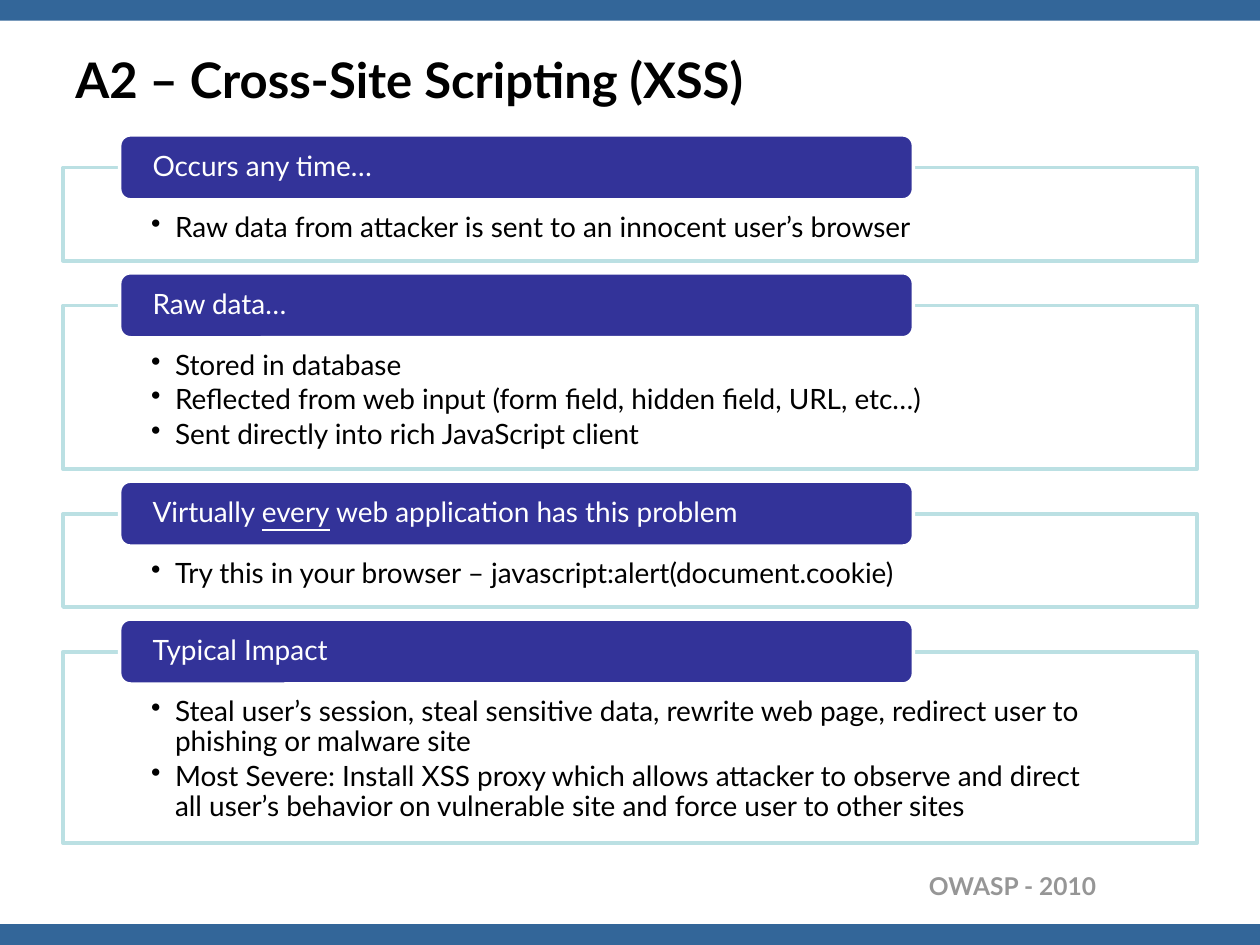
from dataclasses import dataclass

from lxml.etree import SubElement
from pptx import Presentation
from pptx.dml.color import RGBColor
from pptx.enum.shapes import MSO_SHAPE as Preset
from pptx.enum.text import MSO_ANCHOR as Anchor, MSO_AUTO_SIZE as AutoSize, PP_ALIGN as Align
from pptx.oxml.ns import qn
from pptx.util import Cm, Pt


@dataclass(frozen=True)
class Theme:
    font: str = "Lato"
    title_size: int = 28
    footer_size: int = 14
    text_size: int = 16
    band: str = "336699"
    tab: str = "333399"
    outline: str = "BBE0E3"
    light: str = "FFFFFF"
    dark: str = "000000"
    muted: str = "969696"
    line_width: int = 2


THEME = Theme()
SLIDE_W, SLIDE_H = 25.4, 19.05
BAND_H = 0.42
TAB_H, TAB_RISE, SECTION_GAP = 1.31, 0.66, 0.24

# Each section: heading runs as (text, underlined), points, body height in cm
SECTIONS = [
    ([("Occurs any time…", False)],
     ["Raw data from attacker is sent to an innocent user’s browser"], 1.88),
    ([("Raw data…", False)],
     ["Stored in database",
      "Reflected from web input (form field, hidden field, URL, etc…)",
      "Sent directly into rich JavaScript client"], 3.3),
    ([("Virtually ", False), ("every", True), (" web application has this problem", False)],
     ["Try this in your browser – javascript:alert(document.cookie)"], 1.88),
    ([("Typical Impact", False)],
     ["Steal user’s session, steal sensitive data, rewrite web page, "
      "redirect user to phishing or malware site",
      "Most Severe: Install XSS proxy which allows attacker to observe and direct "
      "all user’s behavior on vulnerable site and force user to other sites"], 3.86),
]


def set_all(target, values):
    for name, value in values.items():
        setattr(target, name, value)


def style_font(font, size, color, bold=False):
    set_all(font, {"name": THEME.font, "size": Pt(size), "bold": bold})
    font.color.rgb = RGBColor.from_string(color)


def add_panel(slide, preset, box, fill, outline=None):
    panel = slide.shapes.add_shape(preset, *map(Cm, box))
    panel.shadow.inherit = False
    panel.fill.solid()
    panel.fill.fore_color.rgb = RGBColor.from_string(fill)
    if outline:
        panel.line.color.rgb = RGBColor.from_string(outline)
        panel.line.width = Pt(THEME.line_width)
    else:
        panel.line.fill.background()
    return panel


def set_frame(frame, margins, anchor):
    left, top, right, bottom = map(Cm, margins)
    set_all(frame, {"margin_left": left, "margin_top": top, "margin_right": right,
                    "margin_bottom": bottom, "vertical_anchor": anchor, "word_wrap": True})


def add_bullet(paragraph):
    properties = paragraph._p.get_or_add_pPr()
    properties.set("marL", str(Cm(0.48)))
    properties.set("indent", str(Cm(-0.48)))
    SubElement(properties, qn("a:buChar")).set("char", "•")


def add_label(slide, box, text, size, color, align, auto_size):
    label = slide.shapes.add_textbox(*map(Cm, box))
    set_all(label.text_frame, {"word_wrap": True, "vertical_anchor": Anchor.MIDDLE,
                               "auto_size": auto_size})
    paragraph = label.text_frame.paragraphs[0]
    set_all(paragraph, {"text": text, "alignment": align})
    style_font(paragraph.font, size, color, bold=True)


def add_body(slide, box, points):
    """Outlined panel with a bulleted list."""
    body = add_panel(slide, Preset.RECTANGLE, box, THEME.light, THEME.outline)
    color = body.fill._xPr.find(qn("a:solidFill"))[0]
    SubElement(color, qn("a:alpha")).set("val", "90000")
    frame = body.text_frame
    set_frame(frame, (1.78, 0.92, 1.78, 0.3), Anchor.TOP)
    for index, point in enumerate(points):
        paragraph = frame.add_paragraph() if index else frame.paragraphs[0]
        set_all(paragraph, {"text": point, "alignment": Align.LEFT,
                            "line_spacing": 0.9, "space_after": Pt(2.4)})
        add_bullet(paragraph)
        style_font(paragraph.font, THEME.text_size, THEME.dark)


def add_tab(slide, box, heading):
    tab = add_panel(slide, Preset.ROUNDED_RECTANGLE, box, THEME.tab, THEME.light)
    set_frame(tab.text_frame, (0.6, 0, 0.6, 0), Anchor.MIDDLE)
    paragraph = tab.text_frame.paragraphs[0]
    set_all(paragraph, {"alignment": Align.LEFT, "line_spacing": 0.9})
    for text, underlined in heading:
        run = paragraph.add_run()
        run.text = text
        style_font(run.font, THEME.text_size, THEME.light)
        if underlined:
            run.font.underline = True


def add_section(slide, box, heading, points):
    """Body panel with its heading tab straddling the top edge."""
    left, top, width, height = box
    add_body(slide, (left, top + TAB_RISE, width, height - TAB_RISE), points)
    add_tab(slide, (left + width * 0.05, top, width * 0.7, TAB_H), heading)


def add_sections(slide, left, top, width):
    for heading, points, body_height in SECTIONS:
        height = TAB_RISE + body_height
        add_section(slide, (left, top, width, height), heading, points)
        top += height + SECTION_GAP


def main():
    deck = Presentation()
    set_all(deck, {"slide_width": Cm(SLIDE_W), "slide_height": Cm(SLIDE_H)})
    slide = deck.slides.add_slide(deck.slide_layouts[6])
    for band_top in (0, SLIDE_H - BAND_H):
        add_panel(slide, Preset.RECTANGLE, (0, band_top, SLIDE_W, BAND_H), THEME.band)
    add_label(slide, (13.77, 17.42, 8.58, 0.86), "OWASP - 2010",
              THEME.footer_size, THEME.muted, Align.RIGHT, AutoSize.SHAPE_TO_FIT_TEXT)
    add_label(slide, (1.27, 0.48, 22.86, 2.21), "A2 – Cross-Site Scripting (XSS)",
              THEME.title_size, THEME.dark, Align.LEFT, AutoSize.NONE)
    add_sections(slide, left=1.27, top=2.72, width=22.86)
    deck.save("out.pptx")


if __name__ == "__main__":
    main()
